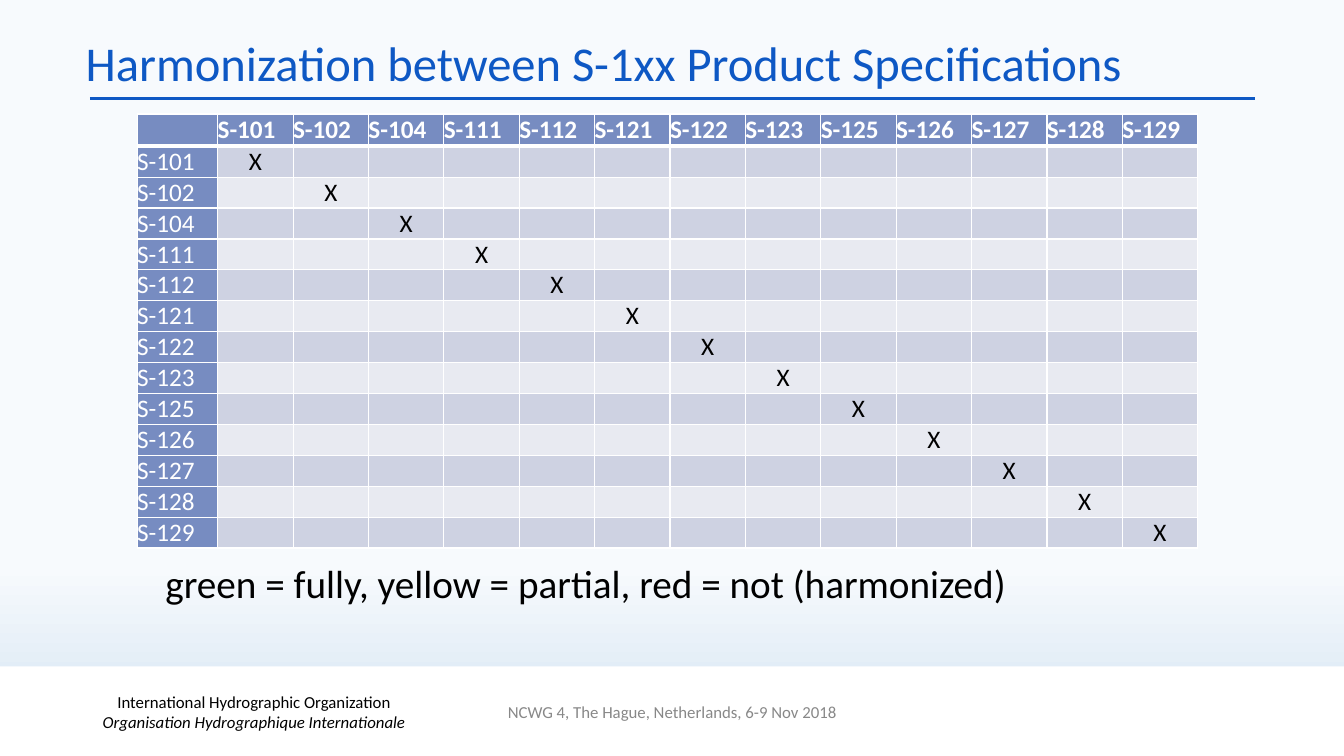
from lxml.etree import SubElement
from pptx import Presentation
from pptx.dml.color import RGBColor
from pptx.enum.shapes import MSO_CONNECTOR, MSO_SHAPE
from pptx.enum.text import MSO_ANCHOR, MSO_AUTO_SIZE, PP_ALIGN
from pptx.oxml.ns import qn
from pptx.util import Inches, Pt

SLIDE_WIDTH = Inches(13.33)
SLIDE_HEIGHT = Inches(7.5)
FONT = "Calibri"
BLUE = "0E58C4"
WHITE = "FFFFFF"
BLACK = "000000"
HEADING_FILL = "778CC1"
BAND_FILLS = ("E8EAF1", "CED2E2")
PRODUCTS = [f"S-{number}" for number in
            (101, 102, 104, 111, 112, 121, 122, 123, 125, 126, 127, 128, 129)]


def color(value):
    return RGBColor.from_string(value)


def across(percent):
    return round(SLIDE_WIDTH * percent / 100)


def down(percent):
    return round(SLIDE_HEIGHT * percent / 100)


def area(left, top, width, height):
    return across(left), down(top), across(width), down(height)


def format_paragraph(paragraph, size, text_color, align=PP_ALIGN.LEFT, bold=False):
    paragraph.alignment = align
    font = paragraph.font
    font.name = FONT
    font.size = Pt(size)
    font.bold = bold
    font.color.rgb = color(text_color)


def format_frame(frame):
    frame.word_wrap = True
    frame.auto_size = MSO_AUTO_SIZE.NONE
    frame.vertical_anchor = MSO_ANCHOR.MIDDLE
    frame.margin_left = frame.margin_right = Inches(0.05)
    frame.margin_top = frame.margin_bottom = Inches(0.05)


def paint_background(slide):
    fill = slide.background.fill
    fill.gradient()
    fill.gradient_angle = 270
    for stop, (position, value) in zip(fill.gradient_stops,
                                       ((0.75, "F7FAFD"), (1, "D0E2F1"))):
        stop.position = position
        stop.color.rgb = color(value)


def add_rule(slide, start, end, height):
    rule = slide.shapes.add_connector(MSO_CONNECTOR.STRAIGHT, across(start), down(height),
                                      across(end), down(height))
    rule.line.color.rgb = color(BLUE)
    rule.line.width = Pt(2.25)
    SubElement(rule._element.spPr, qn("a:effectLst"))


def add_band(slide, bounds):
    band = slide.shapes.add_shape(MSO_SHAPE.RECTANGLE, *bounds)
    band.shadow.inherit = False
    band.fill.solid()
    band.fill.fore_color.rgb = color(WHITE)
    band.line.fill.background()


def set_title(slide, text, bounds):
    title = slide.shapes.title
    title.left, title.top, title.width, title.height = bounds
    title.text = text
    format_frame(title.text_frame)
    paragraph = title.text_frame.paragraphs[0]
    paragraph.line_spacing = 0.9
    format_paragraph(paragraph, 34.7, BLUE)


def add_text(slide, text, bounds, size, text_color, align, italic_line=None):
    frame = slide.shapes.add_textbox(*bounds).text_frame
    format_frame(frame)
    paragraph = frame.paragraphs[0]
    paragraph.add_run().text = text
    if italic_line:
        paragraph.add_line_break()
        run = paragraph.add_run()
        run.text = italic_line
        run.font.italic = True
    format_paragraph(paragraph, size, text_color, align)


def set_borders(cell, bottom):
    properties = cell._tc.get_or_add_tcPr()
    for side, width in (("L", 1), ("R", 1), ("T", 1), ("B", bottom)):
        line = SubElement(properties, qn(f"a:ln{side}"), w=str(Pt(width)))
        fill = SubElement(line, qn("a:solidFill"))
        SubElement(fill, qn("a:srgbClr"), val=WHITE)


def fill_cell(cell, row, column):
    cell.margin_left = cell.margin_right = cell.margin_top = cell.margin_bottom = 0
    cell.vertical_anchor = MSO_ANCHOR.MIDDLE
    set_borders(cell, 1 if row else 3)
    heading = row == 0 or column == 0
    cell.fill.solid()
    cell.fill.fore_color.rgb = color(HEADING_FILL if heading else BAND_FILLS[row % 2])
    if heading and row != column:
        cell.text = PRODUCTS[max(row, column) - 1]
    elif row == column and row:
        cell.text = "X"
    format_paragraph(cell.text_frame.paragraphs[0], 18, WHITE if heading else BLACK,
                     PP_ALIGN.LEFT if heading else PP_ALIGN.CENTER, row == 0)


def add_matrix(slide, bounds):
    count = len(PRODUCTS)
    table = slide.shapes.add_table(count + 1, count + 1, *bounds).table
    width, height = bounds[2:]
    first_width, first_height = across(6), down(4.27)
    for index in range(count + 1):
        table.columns[index].width = (width - first_width) // count if index else first_width
        table.rows[index].height = (height - first_height) // count if index else first_height
    for row in range(count + 1):
        for column in range(count + 1):
            fill_cell(table.cell(row, column), row, column)


def main():
    presentation = Presentation()
    presentation.slide_width = SLIDE_WIDTH
    presentation.slide_height = SLIDE_HEIGHT
    slide = presentation.slides.add_slide(presentation.slide_layouts[5])
    paint_background(slide)
    add_rule(slide, 6.68, 93.4, 13.07)
    add_band(slide, area(0, 88.13, 100, 11.87))
    add_text(slide, "International Hydrographic Organization", area(2.03, 90.93, 33.75, 6.53),
             12, BLACK, PP_ALIGN.CENTER, "Organisation Hydrographique Internationale")
    add_text(slide, "NCWG 4, The Hague, Netherlands, 6-9 Nov 2018",
             area(33.16, 92.27, 33.75, 3.87), 12, "888888", PP_ALIGN.CENTER)
    set_title(slide, "Harmonization between S-1xx Product Specifications",
              area(6, 4, 87.3, 9.33))
    add_text(slide, "green = fully, yellow = partial, red = not (harmonized)",
             area(11.93, 73.2, 70, 7.73), 28, BLACK, PP_ALIGN.LEFT)
    add_matrix(slide, area(10.2, 15.07, 78.92, 57.47))
    presentation.save("out.pptx")


if __name__ == "__main__":
    main()
